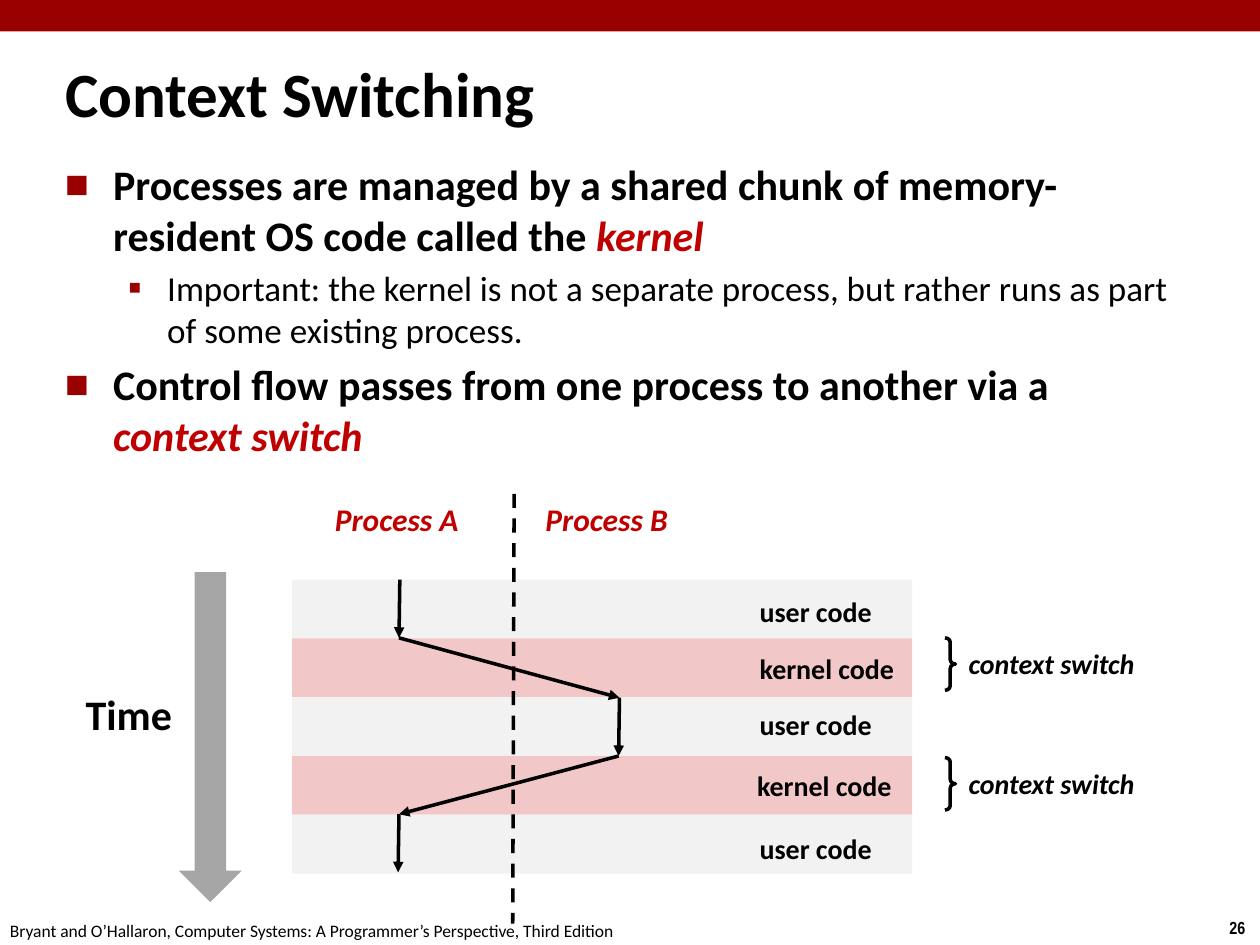
"""Build the slide on context switching between two processes."""
from dataclasses import dataclass

import pptx
import pptx.dml.color
import pptx.enum.dml
import pptx.enum.shapes
import pptx.enum.text
import pptx.oxml
import pptx.oxml.ns
import pptx.shapes.base
import pptx.slide
import pptx.text.text
import pptx.util

BLACK = pptx.dml.color.RGBColor(0x00, 0x00, 0x00)
MAROON = pptx.dml.color.RGBColor(0x99, 0x00, 0x00)
RED = pptx.dml.color.RGBColor(0xC0, 0x00, 0x00)
PINK = pptx.dml.color.RGBColor(0xF1, 0xC7, 0xC7)
PALE = pptx.dml.color.RGBColor(0xF2, 0xF2, 0xF2)
GRAY = pptx.dml.color.RGBColor(0xA6, 0xA6, 0xA6)

KINDS = pptx.enum.shapes.MSO_SHAPE
LEFT, TOP, WIDE, HIGH = 167, 331.2, 354.2, 33.6

FONTS = {
    "title": {"name": "Calibri", "size": 36, "bold": True},
    "head": {"name": "Calibri", "size": 24, "bold": True},
    "term": {"name": "Calibri", "size": 24, "bold": True, "italic": True, "color": RED},
    "sub": {"name": "Calibri", "size": 20, "bold": False},
    "lane": {"name": "Calibri", "size": 18, "bold": True, "italic": True, "color": RED},
    "code": {"name": "Calibri", "size": 16, "bold": True},
    "switch": {"name": "Calibri", "size": 16, "bold": True, "italic": True},
    "foot": {"name": "Calibri", "size": 10},
    "page": {"name": "Arial Narrow", "size": 10, "bold": True},
}


@dataclass(frozen=True)
class Label:
    text: str
    left: float
    top: float
    width: float
    height: float
    font: str


@dataclass(frozen=True)
class Block:
    kind: int
    left: float
    top: float
    width: float
    height: float
    fill: pptx.dml.color.RGBColor


@dataclass(frozen=True)
class Point:
    runs: tuple[tuple[str, str], ...]
    level: int
    margin: float
    hang: float
    mark: str
    scale: int
    before: float


LABELS = (
    Label("26", 695.5, 520.6, 24.5, 19.4, "page"),
    Label("Bryant and O’Hallaron, Computer Systems: A Programmer’s Perspective, Third Edition",
          -1.4, 522, 365.8, 19.4, "foot"),
    Label("Process A", 184.3, 282.2, 86.4, 28.8, "lane"),
    Label("Process B", 304.6, 282.2, 85.7, 28.8, "lane"),
    Label("user code", 427, 336.2, 79.2, 26.6, "code"),
    Label("kernel code", 427, 368.6, 92.2, 26.6, "code"),
    Label("user code", 427, 401, 79.2, 26.6, "code"),
    Label("kernel code", 425.5, 435.6, 92.2, 26.6, "code"),
    Label("user code", 427, 471.6, 79.2, 26.6, "code"),
    Label("Time", 41.8, 390.2, 64.1, 36, "head"),
)

BLOCKS = (
    Block(KINDS.RECTANGLE, 0, 0, 720, 18, MAROON),
    *(Block(KINDS.RECTANGLE, LEFT, TOP + row * HIGH, WIDE, HIGH, PINK if row % 2 else PALE)
      for row in range(5)),
    Block(KINDS.DOWN_ARROW, 102.2, 326.9, 36, 188.6, GRAY),
)

POINTS = (
    Point((("Processes are managed by a shared chunk of memory-resident OS code called the ", "head"),
           ("kernel", "term")), 0, 27.4, 27.4, "■", 60, 4.8),
    Point((("Important: the kernel is not a separate process, "
            "but rather runs as part of some existing process.", "sub"),),
          1, 58.3, 22.3, "▪", 110, 4),
    Point((("Control flow passes from one process to another via a ", "head"),
           ("context switch", "term")), 0, 27.4, 27.4, "■", 60, 4.8),
)

TRACE = ((228.5, 331.2), (228, 364.5), (354, 398.7), (353.5, 432), (228, 465.3), (227.5, 498.5))


def place(left: float, top: float, width: float, height: float) -> list[int]:
    return [pptx.util.Pt(size) for size in (left, top, width, height)]


def write(para: pptx.text.text._Paragraph, text: str, style: str) -> None:
    run = para.add_run()
    run.text = text
    look = dict(FONTS[style])
    run.font.color.rgb = look.pop("color", BLACK)
    look["size"] = pptx.util.Pt(look["size"])
    for key, value in look.items():
        setattr(run.font, key, value)


def label(slide: pptx.slide.Slide, item: Label, wrap: bool = False) -> pptx.text.text.TextFrame:
    box = slide.shapes.add_textbox(*place(item.left, item.top, item.width, item.height))
    frame = box.text_frame
    frame.word_wrap = wrap
    if item.text:
        write(frame.paragraphs[0], item.text, item.font)
    return frame


def block(slide: pptx.slide.Slide, item: Block) -> None:
    shape = slide.shapes.add_shape(
        item.kind, *place(item.left, item.top, item.width, item.height))
    shape.shadow.inherit = False
    shape.fill.solid()
    shape.fill.fore_color.rgb = item.fill
    shape.line.fill.background()


def bullet(para: pptx.text.text._Paragraph, item: Point) -> None:
    para.level = item.level
    para.space_before = pptx.util.Pt(item.before)
    props = para._p.get_or_add_pPr()
    props.set("marL", str(pptx.util.Pt(item.margin)))
    props.set("indent", str(pptx.util.Pt(-item.hang)))
    space = pptx.oxml.ns.nsdecls("a")
    for mark in (
        f'<a:buClr {space}><a:srgbClr val="{MAROON}"/></a:buClr>',
        f'<a:buSzPct {space} val="{item.scale * 1000}"/>',
        f'<a:buFont {space} typeface="Calibri"/>',
        f'<a:buChar {space} char="{item.mark}"/>',
    ):
        props.append(pptx.oxml.parse_xml(mark))
    for text, style in item.runs:
        write(para, text, style)


def stroke(slide: pptx.slide.Slide, start: tuple[float, float],
           end: tuple[float, float], dash: bool = False) -> None:
    line = slide.shapes.add_connector(
        pptx.enum.shapes.MSO_CONNECTOR.STRAIGHT, *place(*start, *end))
    line.line.color.rgb = BLACK
    line.line.width = pptx.util.Pt(2)
    space = pptx.oxml.ns.nsdecls("a")
    if dash:
        line.line.dash_style = pptx.enum.dml.MSO_LINE.DASH
    else:
        line.line._get_or_add_ln().append(
            pptx.oxml.parse_xml(f'<a:tailEnd {space} type="triangle"/>'))
    line._element.spPr.append(pptx.oxml.parse_xml(f"<a:effectLst {space}/>"))


def brace(slide: pptx.slide.Slide, top: float) -> None:
    shape = slide.shapes.add_shape(KINDS.RIGHT_BRACE, *place(540, top, 6, 30))
    shape.shadow.inherit = False
    shape.adjustments[0] = 0.417
    shape.fill.background()
    shape.line.color.rgb = BLACK
    shape.line.width = pptx.util.Pt(2)
    label(slide, Label("context switch", 546.5, top + 1.4, 110.9, 26.6, "switch"))


def main() -> None:
    deck = pptx.Presentation()
    deck.slide_width, deck.slide_height = pptx.util.Pt(720), pptx.util.Pt(540)
    slide = deck.slides.add_slide(deck.slide_layouts[6])
    for item in BLOCKS:
        block(slide, item)
    title = label(slide, Label("Context Switching", 30.2, 30.2, 460, 45.4, "title"), True)
    title.vertical_anchor = pptx.enum.text.MSO_ANCHOR.MIDDLE
    body = label(slide, Label("", 30.2, 87.1, 653, 200.9, "head"), True)
    for rank, item in enumerate(POINTS):
        bullet(body.add_paragraph() if rank else body.paragraphs[0], item)
    for item in LABELS:
        label(slide, item)
    for top in (364.5, 432.9):
        brace(slide, top)
    stroke(slide, (293.8, 282.2), (293, 527.8), True)
    for start, end in zip(TRACE, TRACE[1:]):
        stroke(slide, start, end)
    deck.save("out.pptx")


if __name__ == "__main__":
    main()
